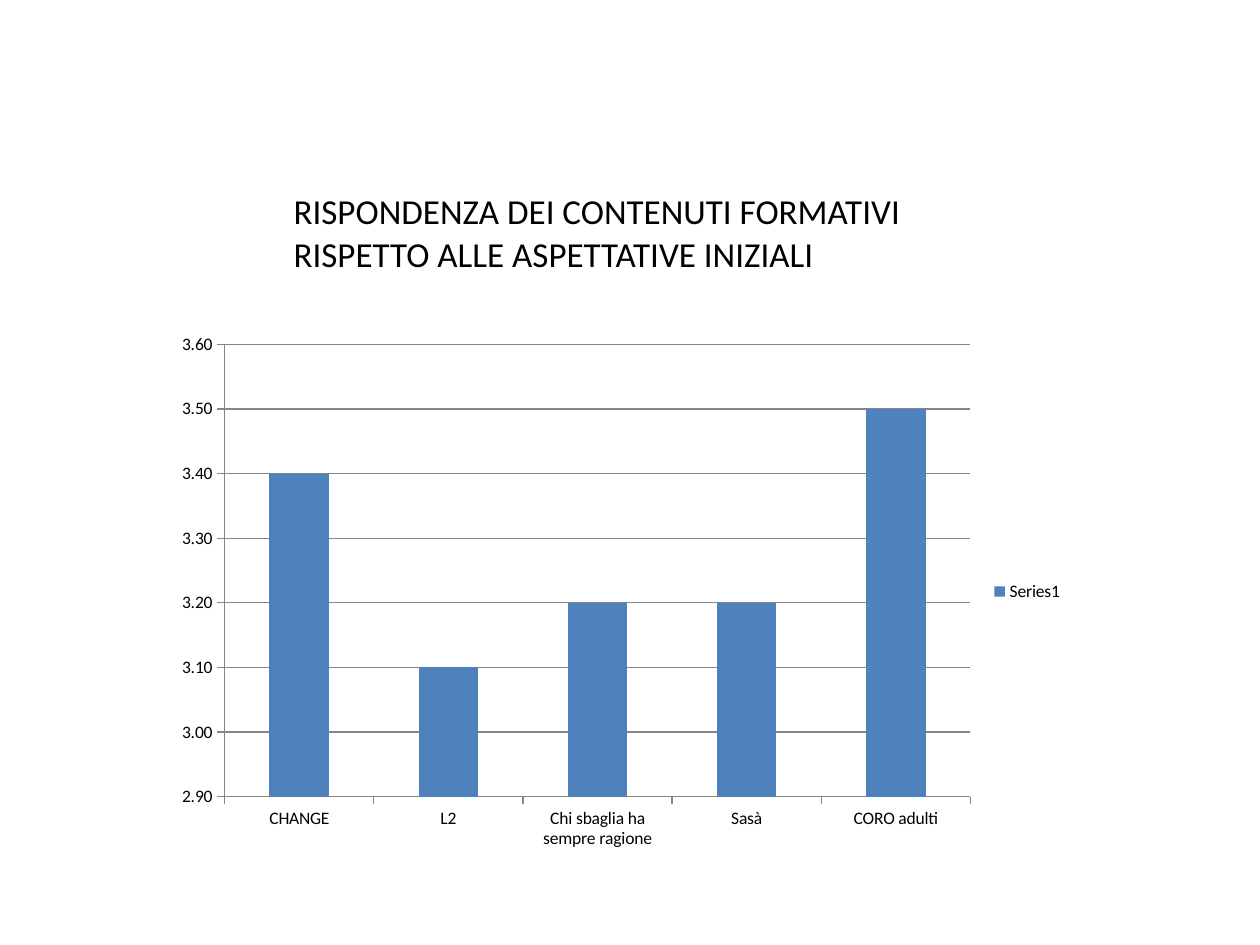
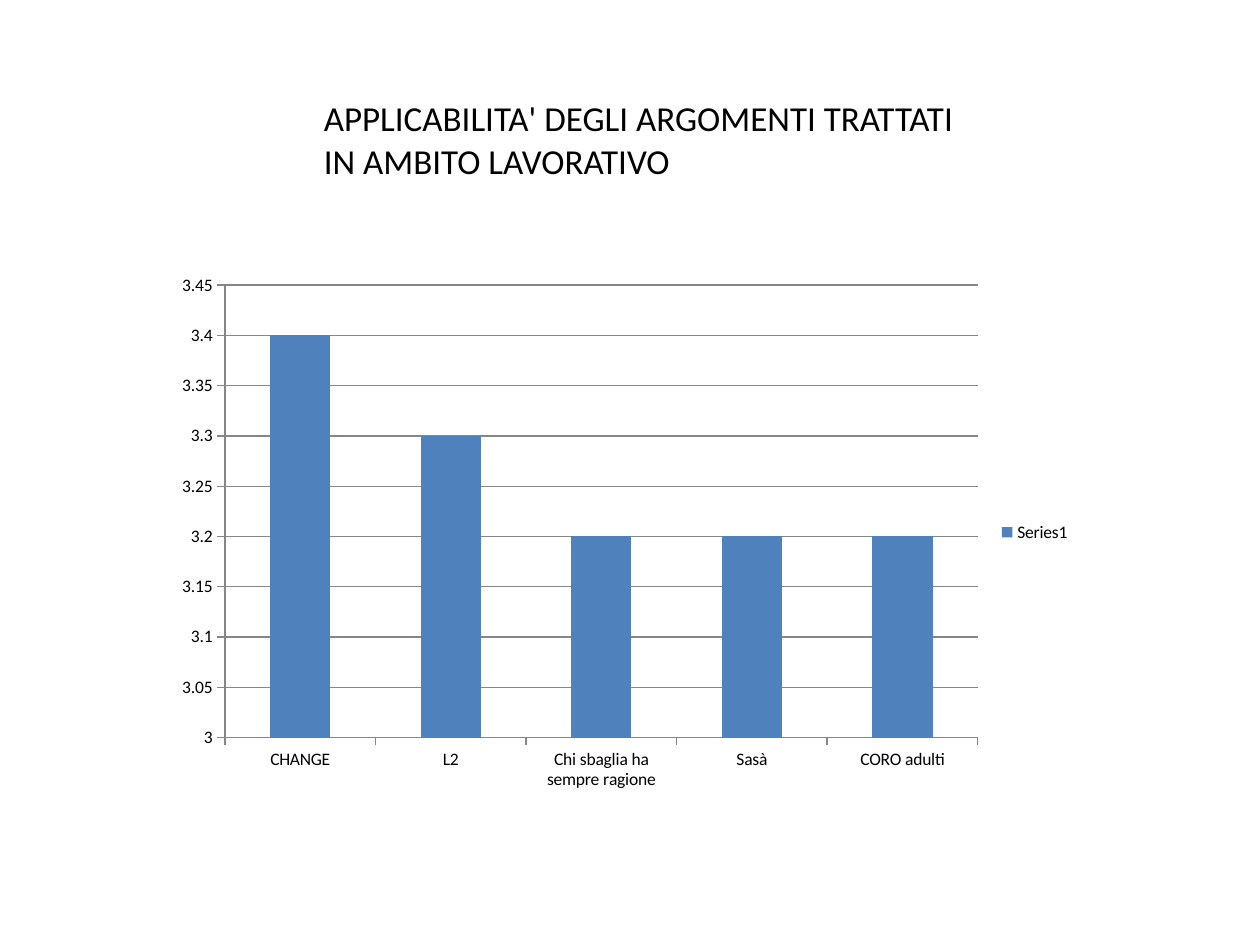
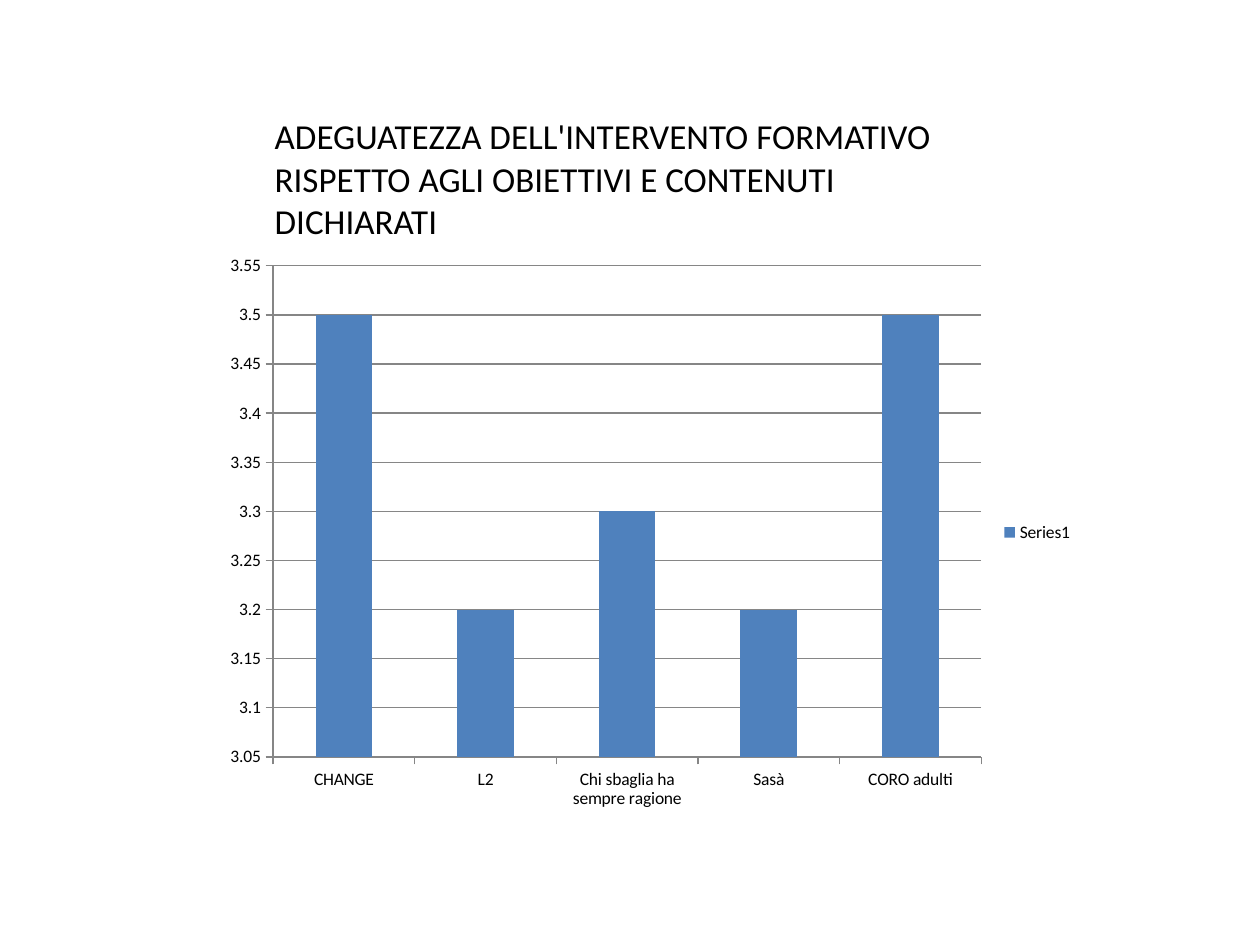
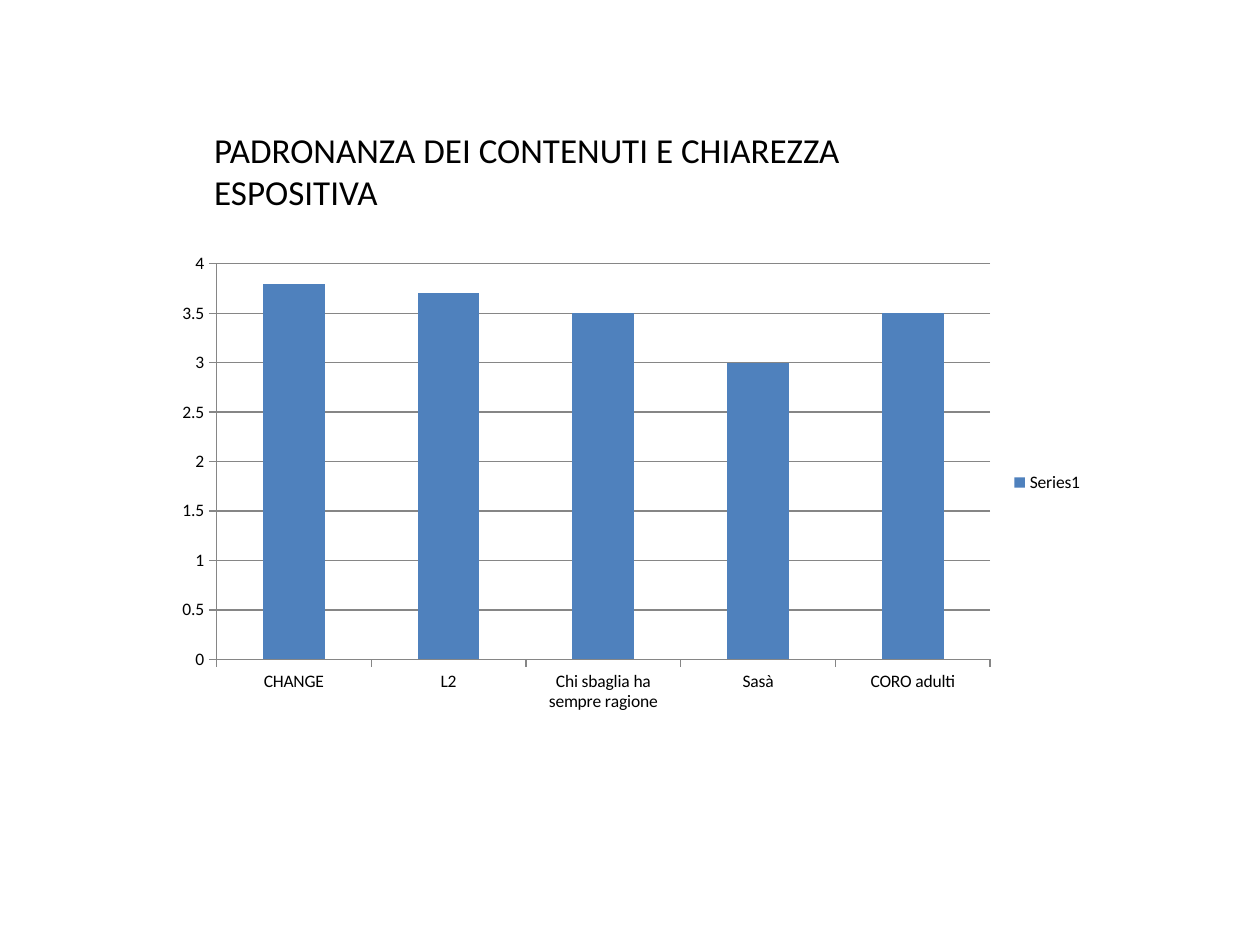
from pptx import Presentation
from pptx.chart.data import CategoryChartData as ChartData
from pptx.dml.color import RGBColor
from pptx.enum.chart import XL_CHART_TYPE as ChartType
from pptx.enum.chart import XL_LEGEND_POSITION as LegendPosition
from pptx.enum.chart import XL_TICK_MARK as TickMark
from pptx.enum.text import MSO_ANCHOR as Anchor
from pptx.util import Inches, Pt

BLACK = RGBColor(0x00, 0x00, 0x00)
BAR_BLUE = RGBColor(0x4F, 0x81, 0xBD)
LINE_GREY = RGBColor(0x86, 0x86, 0x86)
TITLE_FONT = {"name": "Calibri", "size": Pt(20), "bold": False}
CHART_FONT = {"name": "Calibri", "size": Pt(10), "bold": False}
TITLE_CELL = {
    "vertical_anchor": Anchor.BOTTOM,
    "margin_left": Inches(0.01),
    "margin_right": Inches(0.01),
    "margin_top": Inches(0.01),
    "margin_bottom": 0,
}
COURSES = ["CHANGE", "L2", "Chi sbaglia ha sempre ragione", "Sasà", "CORO adulti"]

SURVEY = [
    {
        "title": "RISPONDENZA DEI CONTENUTI FORMATIVI RISPETTO ALLE ASPETTATIVE INIZIALI",
        "title_at": (2.32, 1.51, 5.12, 0.68),
        "chart_at": (1.3, 2.57, 7.24, 4.25),
        "scores": (3.4, 3.1, 3.2, 3.2, 3.5),
        "scale": (2.9, 3.6, 0.1),
        "number_format": "0.00",
    },
    {
        "title": "APPLICABILITA' DEGLI ARGOMENTI TRATTATI IN AMBITO LAVORATIVO",
        "title_at": (2.56, 0.71, 5.04, 0.75),
        "chart_at": (1.3, 2.1, 7.3, 4.25),
        "scores": (3.4, 3.3, 3.2, 3.2, 3.2),
        "scale": (3, 3.45, 0.05),
        "number_format": "General",
    },
    {
        "title": "ADEGUATEZZA DELL'INTERVENTO FORMATIVO RISPETTO AGLI OBIETTIVI "
                 "E CONTENUTI DICHIARATI",
        "title_at": (2.17, 0.29, 5.75, 1.65),
        "chart_at": (1.69, 1.94, 6.93, 4.57),
        "scores": (3.5, 3.2, 3.3, 3.2, 3.5),
        "scale": (3.05, 3.55, 0.05),
        "number_format": "General",
    },
    {
        "title": "PADRONANZA DEI CONTENUTI E CHIAREZZA ESPOSITIVA",
        "title_at": (1.69, 0.29, 6.3, 1.42),
        "chart_at": (1.3, 1.94, 7.4, 3.78),
        "scores": (3.8, 3.7, 3.5, 3, 3.5),
        "scale": (0, 4, 0.5),
        "number_format": "General",
    },
]


def apply_format(target, values):
    """Set each attribute of the target from a dict of values."""
    for name, value in values.items():
        setattr(target, name, value)


def style_font(font, values):
    """Give a font its format and the shared text colour."""
    apply_format(font, values)
    font.color.rgb = BLACK


def style_line(line):
    """Draw a chart line in thin grey."""
    line.color.rgb = LINE_GREY
    line.width = Pt(0.75)


def add_title(page, text, position):
    """Add the question as a borderless one-cell table."""
    table = page.shapes.add_table(1, 1, *map(Inches, position)).table
    apply_format(table, {"first_row": False, "horz_banding": False})
    cell = table.cell(0, 0)
    cell.fill.background()
    apply_format(cell, TITLE_CELL)
    span = cell.text_frame.paragraphs[0].add_run()
    span.text = text
    style_font(span.font, TITLE_FONT)


def style_axes(chart, scale, number_format):
    """Set the value scale, tick marks and grid of a chart."""
    minimum, maximum, step = scale
    value_axis = chart.value_axis
    apply_format(value_axis, {
        "minimum_scale": minimum,
        "maximum_scale": maximum,
        "major_unit": step,
        "has_major_gridlines": True,
    })
    apply_format(value_axis.tick_labels, {
        "number_format": number_format,
        "number_format_is_linked": False,
    })
    style_line(value_axis.major_gridlines.format.line)
    for axis in (value_axis, chart.category_axis):
        axis.major_tick_mark = TickMark.OUTSIDE
        axis.minor_tick_mark = TickMark.NONE
        style_line(axis.format.line)


def add_score_chart(page, position, scores, scale, number_format):
    """Add a column chart of the score of each course."""
    data = ChartData()
    data.categories = COURSES
    data.add_series("Series1", scores)
    chart = page.shapes.add_chart(
        ChartType.COLUMN_CLUSTERED, *map(Inches, position), data
    ).chart
    apply_format(chart, {"has_title": False, "has_legend": True})
    style_font(chart.font, CHART_FONT)
    apply_format(chart.legend, {
        "position": LegendPosition.RIGHT,
        "include_in_layout": False,
    })
    plot = chart.plots[0]
    apply_format(plot, {"gap_width": 150, "vary_by_categories": False})
    bars = plot.series[0].format.fill
    bars.solid()
    bars.fore_color.rgb = BAR_BLUE
    style_axes(chart, scale, number_format)


def main():
    """Build one page for each survey question."""
    deck = Presentation()
    deck.slide_width, deck.slide_height = Inches(10), Inches(7.5)
    for question in SURVEY:
        page = deck.slides.add_slide(deck.slide_layouts[6])
        add_score_chart(page, question["chart_at"], question["scores"],
                        question["scale"], question["number_format"])
        add_title(page, question["title"], question["title_at"])
    deck.save("out.pptx")


if __name__ == "__main__":
    main()
